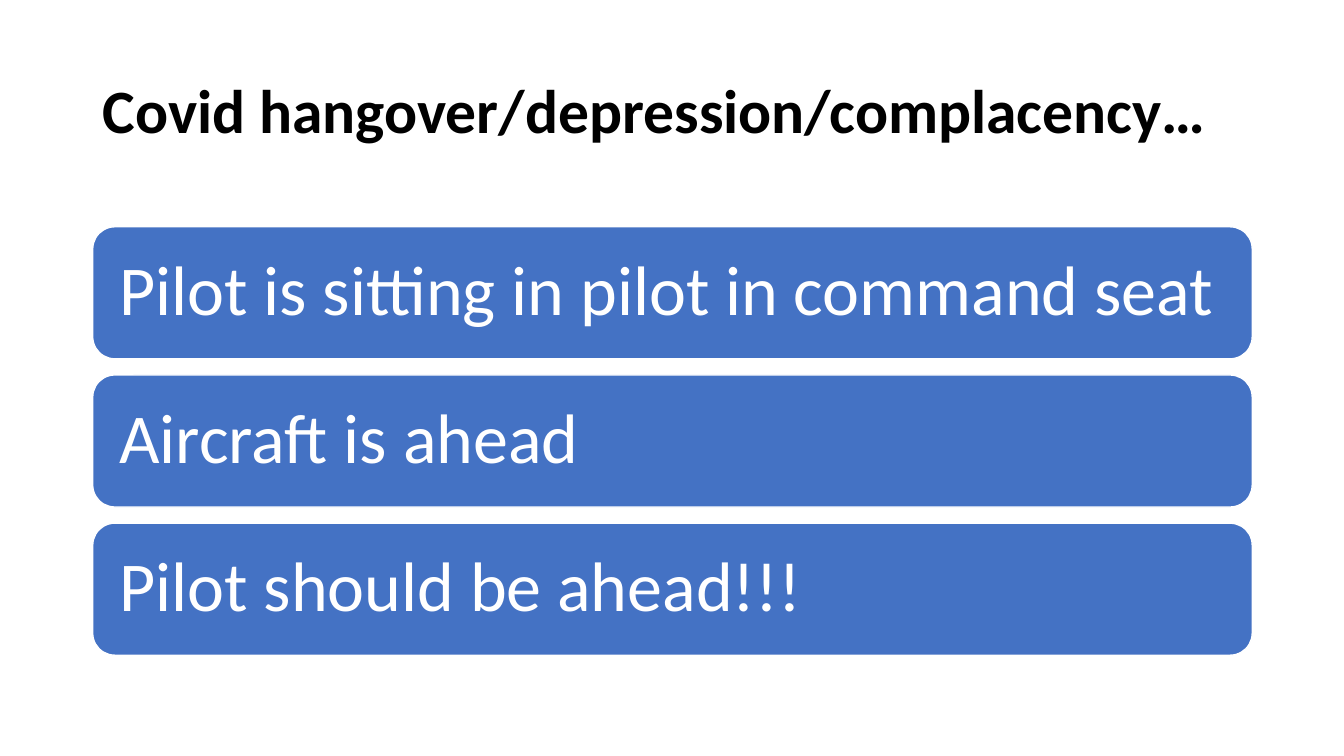
from pptx import Presentation
from pptx.dml.color import RGBColor
from pptx.enum import shapes, text
from pptx.util import Inches, Pt

BLACK = RGBColor(0x00, 0x00, 0x00)
WHITE = RGBColor(0xFF, 0xFF, 0xFF)
BLUE = RGBColor(0x44, 0x72, 0xC4)
LEFT, WIDTH = Inches(0.92), Inches(11.5)
POINTS = [
    "Pilot is sitting in pilot in command seat",
    "Aircraft is ahead",
    "Pilot should be ahead!!!",
]


def write(shape, words, size, color, bold=False, inset=0.1):
    """Fill a shape with one left-aligned, vertically centred line."""
    frame = shape.text_frame
    frame.word_wrap = True
    frame.vertical_anchor = text.MSO_ANCHOR.MIDDLE
    frame.margin_left = frame.margin_right = Inches(inset)
    para = frame.paragraphs[0]
    para.alignment = text.PP_ALIGN.LEFT
    para.line_spacing = 0.9
    run = para.add_run()
    run.text = words
    font = run.font
    font.name, font.size, font.bold = "Calibri", Pt(size), bold
    font.color.rgb = color


def add_title(slide, words):
    """Add the slide heading."""
    box = slide.shapes.add_textbox(LEFT, Inches(0.4), WIDTH, Inches(1.45))
    write(box, words, 44, BLACK, bold=True)


def add_bar(slide, top, words):
    """Add a rounded bar holding one point."""
    bar = slide.shapes.add_shape(
        shapes.MSO_SHAPE.ROUNDED_RECTANGLE, LEFT, top, WIDTH, Inches(1.31))
    bar.shadow.inherit = False
    bar.fill.solid()
    bar.fill.fore_color.rgb = BLUE
    bar.line.color.rgb = WHITE
    bar.line.width = Pt(1)
    write(bar, words, 50, WHITE, inset=0.2)


def main():
    """Build and save the slide."""
    deck = Presentation()
    deck.slide_width, deck.slide_height = Inches(13.33), Inches(7.5)
    slide = deck.slides.add_slide(deck.slide_layouts[6])
    add_title(slide, "Covid hangover/depression/complacency…")
    for row, words in enumerate(POINTS):
        add_bar(slide, Inches(2.25 + 1.47 * row), words)
    deck.save("out.pptx")


if __name__ == "__main__":
    main()
